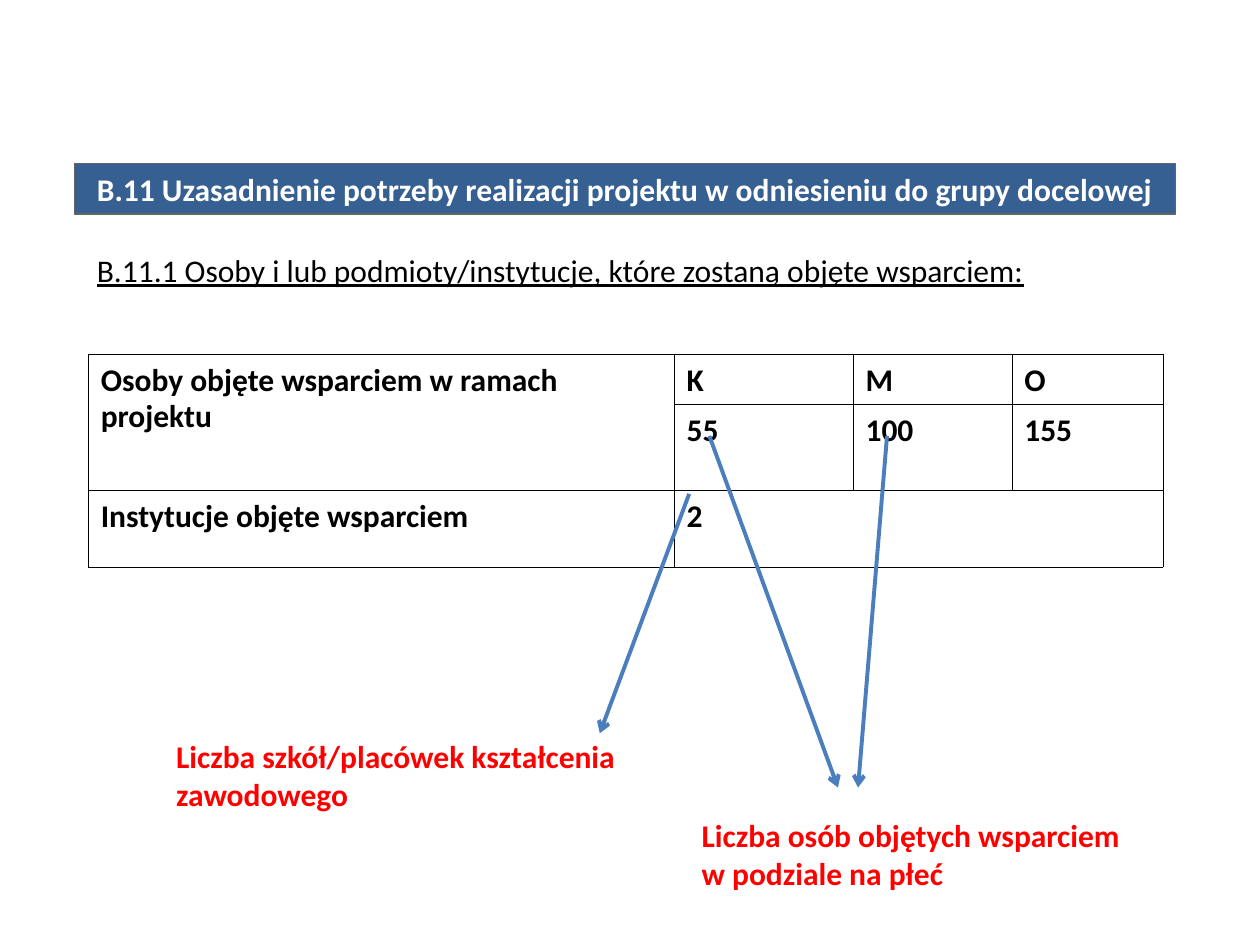
"""Build the slide on persons and institutions covered by project support."""
from lxml.etree import SubElement
from pptx import Presentation
from pptx.dml.color import RGBColor
from pptx.enum.shapes import MSO_CONNECTOR, MSO_SHAPE
from pptx.enum.text import MSO_ANCHOR, PP_ALIGN
from pptx.oxml.ns import qn
from pptx.util import Inches, Pt

COLORS = {"black": "000000", "white": "FFFFFF", "red": "FF0000",
          "banner": "376092", "edge": "636466", "arrow": "4B7EBC"}


def color(name):
    return RGBColor.from_string(COLORS[name])


def write(frame, text, tint, bold=True, under=False):
    frame.text = text
    frame.word_wrap = True
    para = frame.paragraphs[0]
    para.alignment = PP_ALIGN.LEFT
    font = para.runs[0].font
    font.name, font.size = "Calibri", Pt(18)
    font.bold, font.underline = bold, under
    font.color.rgb = color(tint)
    return para


deck = Presentation()
deck.slide_width, deck.slide_height = Inches(10), Inches(7.5)
slide = deck.slides.add_slide(deck.slide_layouts[6])
shapes = slide.shapes

head = shapes.add_textbox(Inches(0.67), Inches(1.94), Inches(8.58), Inches(1.04))
write(head.text_frame,
      "B.11.1 Osoby i lub podmioty/instytucje, które zostaną objęte wsparciem:",
      "black", bold=False, under=True)

rows = [["Osoby objęte wsparciem w ramach projektu", "K", "M", "O"],
        ["", "55", "100", "155"],
        ["Instytucje objęte wsparciem", "2", "", ""]]
widths = [4.65, 1.42, 1.26, 1.2]
heights = [0.4, 0.68, 0.61]
grid = shapes.add_table(3, 4, Inches(0.7), Inches(2.81),
                        Inches(sum(widths)), Inches(sum(heights))).table
for col, width in zip(grid.columns, widths):
    col.width = Inches(width)
for row, height in zip(grid.rows, heights):
    row.height = Inches(height)
grid.cell(0, 0).merge(grid.cell(1, 0))
grid.cell(2, 1).merge(grid.cell(2, 3))

for r, row in enumerate(rows):
    for c, text in enumerate(row):
        cell = grid.cell(r, c)
        cell.margin_left = cell.margin_right = Inches(0.1)
        cell.margin_top, cell.margin_bottom = Inches(0.07), Inches(0.05)
        props = cell._tc.get_or_add_tcPr()
        for side in ("a:lnL", "a:lnR", "a:lnT", "a:lnB"):
            edge = SubElement(props, qn(side), w=str(Pt(0.06)))
            fill = SubElement(edge, qn("a:solidFill"))
            SubElement(fill, qn("a:srgbClr"), val=COLORS["black"])
        cell.fill.solid()
        cell.fill.fore_color.rgb = color("white")
        if text:
            write(cell.text_frame, text, "black").line_spacing = 0.93

arrows = [(5.47, 3.92, 4.76, 5.82), (7.04, 3.46, 6.81, 6.25), (5.63, 3.46, 6.65, 6.25)]
for ends in arrows:
    arrow = shapes.add_connector(MSO_CONNECTOR.STRAIGHT, *map(Inches, ends))
    arrow.line.color.rgb = color("arrow")
    arrow.line.width = Pt(2.25)
    SubElement(arrow.line._get_or_add_ln(), qn("a:tailEnd"), type="arrow")
    SubElement(arrow._element.spPr, qn("a:effectLst"))

notes = [(1.3, 5.8, "Liczba szkół/placówek kształcenia zawodowego"),
         (5.47, 6.43, "Liczba osób objętych wsparciem w podziale na płeć")]
for left, top, text in notes:
    note = shapes.add_textbox(Inches(left), Inches(top), Inches(3.7), Inches(0.71))
    write(note.text_frame, text, "red")

banner = shapes.add_shape(MSO_SHAPE.RECTANGLE, Inches(0.59), Inches(1.3),
                          Inches(8.74), Inches(0.4))
banner.shadow.inherit = False
banner.fill.solid()
banner.fill.fore_color.rgb = color("banner")
banner.line.color.rgb = color("edge")
banner.line.width = Pt(0)
frame = banner.text_frame
write(frame,
      "B.11 Uzasadnienie potrzeby realizacji projektu w odniesieniu do grupy docelowej",
      "white")
frame.margin_left, frame.margin_right = Inches(0.18), Inches(0.05)
frame.vertical_anchor = MSO_ANCHOR.MIDDLE

deck.save("out.pptx")
